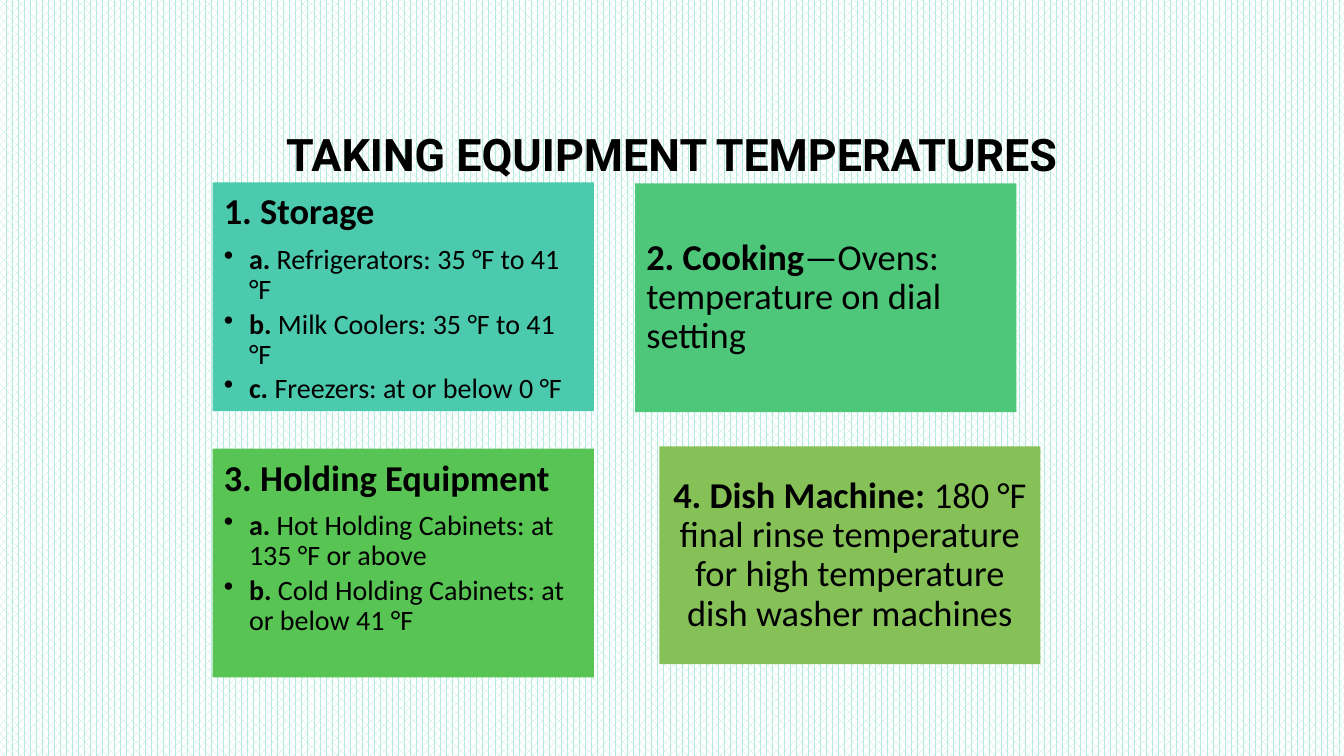
import pptx
import pptx.dml.color
import pptx.enum.dml
import pptx.enum.shapes
import pptx.enum.text
import pptx.oxml.ns
import pptx.util
from lxml import etree

Inches = pptx.util.Inches
Pt = pptx.util.Pt
Align = pptx.enum.text.PP_ALIGN
Anchor = pptx.enum.text.MSO_ANCHOR


def color(code):
    return pptx.dml.color.RGBColor.from_string(code)


def apply(target, values):
    for name, value in values.items():
        setattr(target, name, value)


class Deck:
    ink = "000000"
    head = {"name": "Roboto", "size": Pt(32)}
    lead = {"name": "Calibri", "size": Pt(26)}
    item = {"name": "Calibri", "size": Pt(20)}
    inset = dict.fromkeys(
        ("margin_left", "margin_top", "margin_right", "margin_bottom"), Inches(0.11))

    def __init__(self, wide, high):
        self.deck = pptx.Presentation()
        apply(self.deck, {"slide_width": Inches(wide), "slide_height": Inches(high)})
        self.slide = self.deck.slides.add_slide(self.deck.slide_layouts[5])

    def back(self, front, rear):
        fill = self.slide.background.fill
        fill.patterned()
        fill.pattern = pptx.enum.dml.MSO_PATTERN.PERCENT_60
        fill.fore_color.rgb = color(front)
        fill.back_color.rgb = color(rear)

    def label(self, para, style, bold, plain=""):
        for text, heavy in ((bold, True), (plain, False)):
            if text:
                run = para.add_run()
                run.text = text
                apply(run.font, {**style, "bold": heavy})
                run.font.color.rgb = color(self.ink)

    def title(self, text, left, top, wide, high):
        shape = self.slide.shapes.title
        apply(shape, {"left": Inches(left), "top": Inches(top),
                      "width": Inches(wide), "height": Inches(high)})
        apply(shape.text_frame, {
            "word_wrap": True, "vertical_anchor": Anchor.MIDDLE,
            "auto_size": pptx.enum.text.MSO_AUTO_SIZE.NONE})
        para = shape.text_frame.paragraphs[0]
        apply(para, {"alignment": Align.CENTER, "line_spacing": 0.9})
        self.label(para, self.head, text)

    def bullet(self, para):
        para.level = 1
        props = para._p.get_or_add_pPr()
        props.set("marL", str(Inches(0.25)))
        props.set("indent", str(Inches(-0.25)))
        mark = etree.SubElement(props, pptx.oxml.ns.qn("a:buChar"))
        mark.set("char", "•")

    def card(self, left, top, high, fill, lead, items=(), align=Align.LEFT):
        shape = self.slide.shapes.add_shape(
            pptx.enum.shapes.MSO_SHAPE.RECTANGLE,
            Inches(left), Inches(top), Inches(3.78), Inches(high))
        shape.shadow.inherit = False
        shape.fill.solid()
        shape.fill.fore_color.rgb = color(fill)
        shape.line.fill.background()
        frame = shape.text_frame
        anchor = Anchor.TOP if items else Anchor.MIDDLE
        apply(frame, {**self.inset, "word_wrap": True, "vertical_anchor": anchor})
        para = frame.paragraphs[0]
        apply(para, {"alignment": align, "line_spacing": 0.9, "space_after": Pt(9)})
        self.label(para, self.lead, *lead)
        for entry in items:
            para = frame.add_paragraph()
            self.bullet(para)
            apply(para, {"alignment": align, "line_spacing": 0.9, "space_after": Pt(3)})
            self.label(para, self.item, *entry)


def main():
    show = Deck(13.33, 7.5)
    show.back("B7EADE", "FFFFFF")
    show.title("TAKING EQUIPMENT TEMPERATURES", 1, 0.68, 11.33, 1.75)
    show.card(2.11, 1.81, 2.27, "4BCAAD", ("1. Storage",), (
        ("a. ", "Refrigerators: 35 °F to 41 °F"),
        ("b. ", "Milk Coolers: 35 °F to 41 °F"),
        ("c. ", "Freezers: at or below 0 °F")))
    show.card(6.3, 1.82, 2.27, "4FC77B",
              ("2. Cooking", "—Ovens: temperature on dial setting"))
    show.card(2.11, 4.45, 2.27, "57C453", ("3. Holding Equipment",), (
        ("a. ", "Hot Holding Cabinets: at 135 °F or above"),
        ("b. ", "Cold Holding Cabinets: at or below 41 °F")))
    show.card(6.54, 4.43, 2.16, "86C157", (
        "4. Dish Machine: ",
        "180 °F final rinse temperature for high temperature dish washer machines"),
        align=Align.CENTER)
    show.deck.save("out.pptx")


if __name__ == "__main__":
    main()
